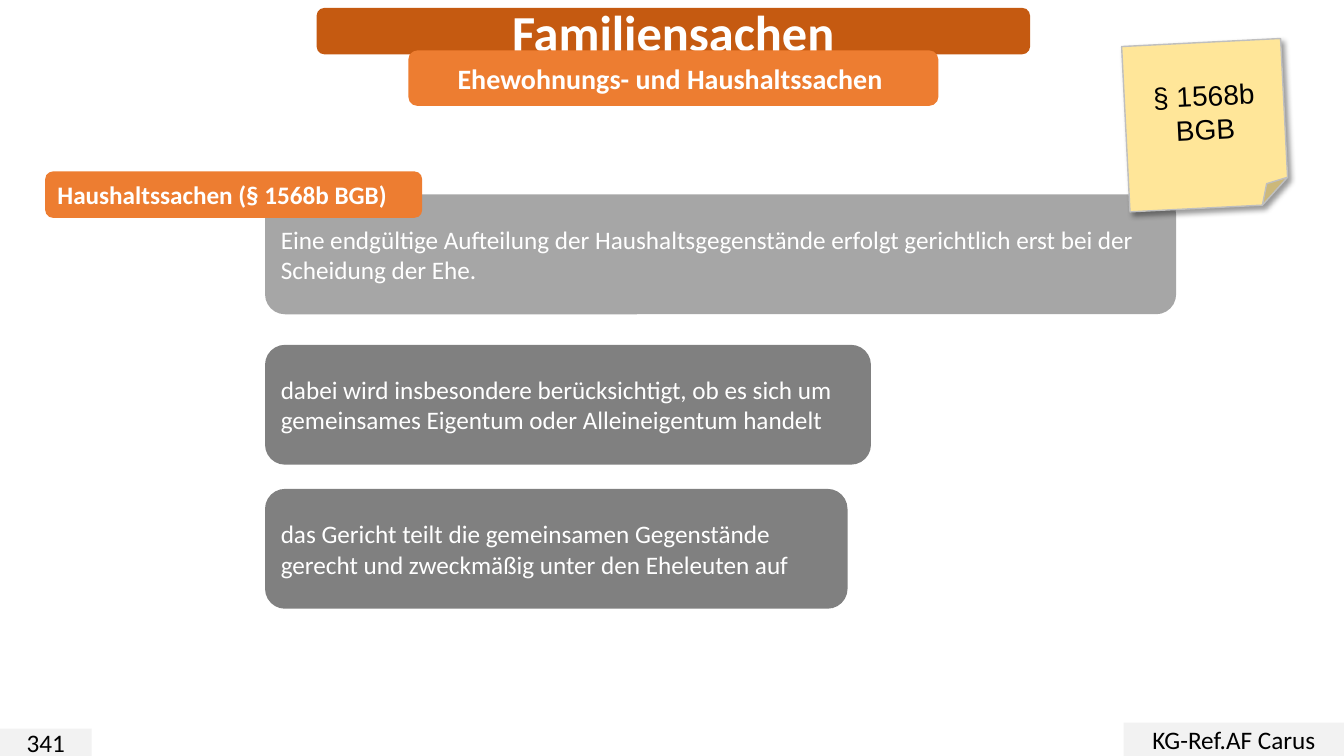
from lxml.etree import SubElement
from pptx import Presentation
from pptx.dml.color import RGBColor
from pptx.enum.shapes import MSO_SHAPE
from pptx.enum.text import MSO_ANCHOR, PP_ALIGN
from pptx.oxml.ns import qn
from pptx.util import Cm, Pt

COLOURS = {
    "rust": "C55A11",
    "orange": "ED7D31",
    "light grey": "A6A6A6",
    "dark grey": "808080",
    "footer": "F2F2F2",
    "note": "FFE699",
    "note edge": "BFBFBF",
    "white": "FFFFFF",
    "black": "000000",
}
FORMATS = {
    "title": {"size": Pt(36), "name": "Calibri", "bold": True},
    "subtitle": {"size": Pt(20), "name": "Calibri", "bold": True},
    "tag": {"size": Pt(18), "name": "Calibri", "bold": True},
    "body": {"size": Pt(18), "name": "Calibri", "bold": False},
    "note": {"size": Pt(20), "name": "Arial", "bold": False},
}
ROUND, RECT, FOLDED = MSO_SHAPE.ROUNDED_RECTANGLE, MSO_SHAPE.RECTANGLE, MSO_SHAPE.FOLDED_CORNER
LEFT, CENTER = PP_ALIGN.LEFT, PP_ALIGN.CENTER
CARD_LEFT, CARD_HEIGHT = 6.68, 3.02


def rgb(name):
    return RGBColor.from_string(COLOURS[name])


def add_box(kind, place, fill, text, style, align=CENTER, ink="white"):
    """Add a filled shape at place (cm); each line of text is a paragraph."""
    box = slide.shapes.add_shape(kind, *[Cm(length) for length in place])
    box.shadow.inherit = False
    box.fill.solid()
    box.fill.fore_color.rgb = rgb(fill)
    box.line.fill.background()
    frame = box.text_frame
    frame.word_wrap = True
    frame.vertical_anchor = MSO_ANCHOR.MIDDLE
    frame.text = text
    for para in frame.paragraphs:
        para.alignment = align
        for span in para.runs:
            span.font.color.rgb = rgb(ink)
            for attribute, value in FORMATS[style].items():
                setattr(span.font, attribute, value)
    return box


deck = Presentation()
deck.slide_width, deck.slide_height = Cm(33.87), Cm(19.05)
slide = deck.slides.add_slide(deck.slide_layouts[6])

# Heading and footer
add_box(ROUND, (7.98, 0.2, 17.98, 1.17), "rust", "Familiensachen", "title")
add_box(RECT, (0, 18.36, 2.31, 0.69), "footer", "341", "body", ink="black")
add_box(RECT, (28.32, 18.21, 5.55, 0.84), "footer", "KG-Ref.AF Carus", "body", ink="black")
add_box(ROUND, (10.29, 1.27, 13.36, 1.4), "orange",
        "Ehewohnungs- und Haushaltssachen ", "subtitle")

# Statements: top, width, fill, text
cards = [
    (4.9, 22.96, "light grey", "Eine endgültige Aufteilung der Haushaltsgegenstände "
     "erfolgt gerichtlich erst bei der Scheidung der Ehe."),
    (8.69, 15.27, "dark grey", "dabei wird insbesondere berücksichtigt, ob es sich um "
     "gemeinsames Eigentum oder Alleineigentum handelt"),
    (12.32, 14.68, "dark grey", "das Gericht teilt die gemeinsamen Gegenstände "
     "gerecht und zweckmäßig unter den Eheleuten auf"),
]
for top, width, fill, text in cards:
    add_box(ROUND, (CARD_LEFT, top, width, CARD_HEIGHT), fill, text, "body", LEFT)

add_box(ROUND, (1.14, 4.32, 9.5, 1.17), "orange", "Haushaltssachen (§ 1568b BGB)", "tag", LEFT)

# Sticky note with a soft shadow
note = add_box(FOLDED, (28.37, 1.07, 4.01, 4.17), "note", "§ 1568b\nBGB", "note", ink="black")
note.rotation = 357.1
note.line.color.rgb = rgb("note edge")
note.line.width = Pt(1)
effects = note._element.spPr.find(qn("a:effectLst"))
shadow = SubElement(effects, qn("a:outerShdw"), blurRad=str(Pt(4)), dist=str(Pt(3)),
                    dir=str(45 * 60000), algn="tl", rotWithShape="0")
shade = SubElement(shadow, qn("a:srgbClr"), val=COLOURS["black"])
SubElement(shade, qn("a:alpha"), val="40000")

deck.save("out.pptx")
